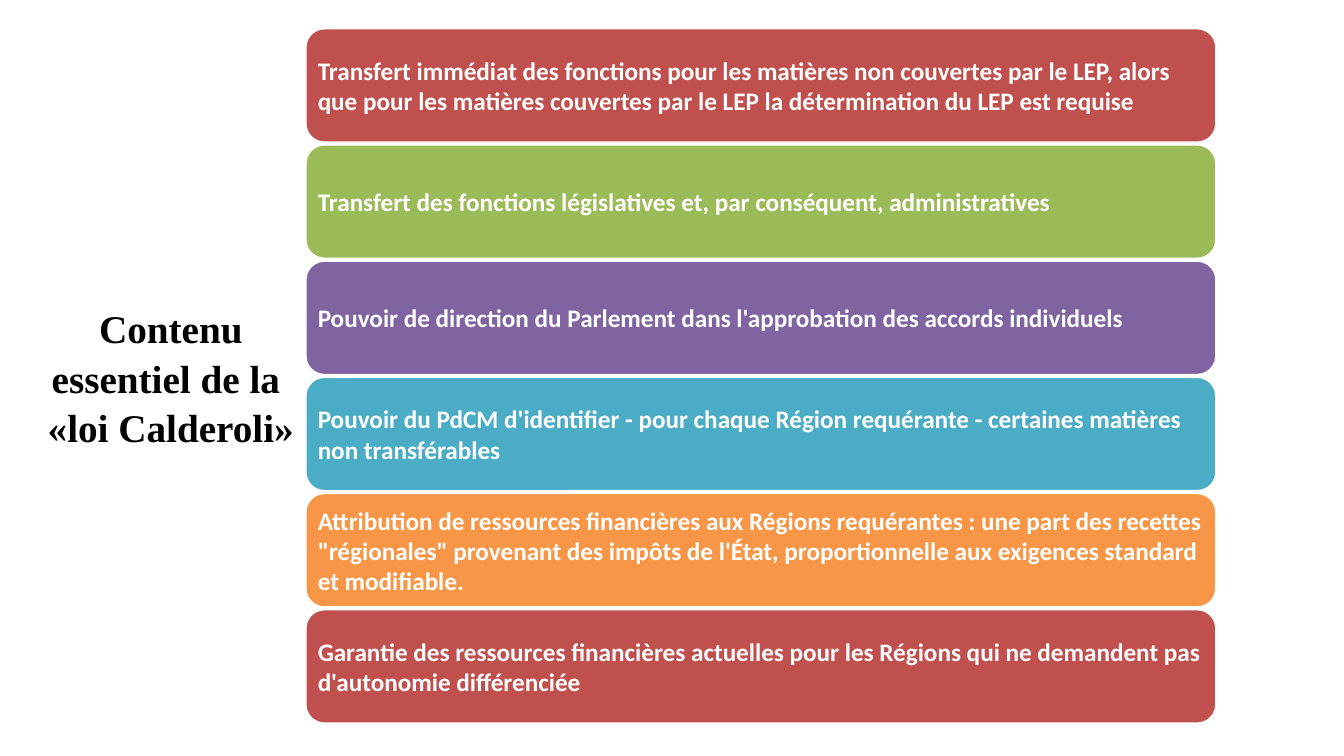
import pptx
import pptx.util
import pptx.dml.color
import pptx.enum.shapes
import pptx.enum.text

EMU_PER_PX = 6350  # 1920 x 1080 px on a 13.33 x 7.5 inch slide

COLORS = {
    "black": "000000",
    "white": "FFFFFF",
    "red": "C0504D",
    "green": "9BBB59",
    "purple": "8064A2",
    "blue": "4BACC6",
    "orange": "F79646",
}

HEADING = "Contenu essentiel de la \v«loi Calderoli»"

PROVISIONS = [
    ("red", "Transfert immédiat des fonctions pour les matières non couvertes par le LEP, "
            "alors que pour les matières couvertes par le LEP la détermination du LEP est requise"),
    ("green", "Transfert des fonctions législatives et, par conséquent, administratives"),
    ("purple", "Pouvoir de direction du Parlement dans l'approbation des accords individuels"),
    ("blue", "Pouvoir du PdCM d'identifier - pour chaque Région requérante - "
             "certaines matières non transférables"),
    ("orange", "Attribution de ressources financières aux Régions requérantes : une part des "
               "recettes \"régionales\" provenant des impôts de l'État, proportionnelle aux "
               "exigences standard et modifiable."),
    ("red", "Garantie des ressources financières actuelles pour les Régions qui ne demandent "
            "pas d'autonomie différenciée"),
]


def px(length):
    return pptx.util.Emu(length * EMU_PER_PX)


def rgb(name):
    return pptx.dml.color.RGBColor.from_string(COLORS[name])


def write_text(frame, text, *, font, size, color, align, inset=None, spacing=1.0):
    frame.word_wrap = True
    frame.auto_size = pptx.enum.text.MSO_AUTO_SIZE.NONE
    frame.vertical_anchor = pptx.enum.text.MSO_ANCHOR.MIDDLE
    if inset is not None:
        frame.margin_left = frame.margin_right = px(inset)
        frame.margin_top = frame.margin_bottom = px(inset)
    frame.text = text
    paragraph = frame.paragraphs[0]
    paragraph.alignment = align
    paragraph.line_spacing = spacing
    for run in paragraph.runs:
        run.font.name = font
        run.font.size = pptx.util.Pt(size)
        run.font.bold = True
        run.font.color.rgb = rgb(color)


class SlideBuilder:
    heading_font = "Times New Roman"
    body_font = "Calibri"

    def __init__(self, slide):
        self.slide = slide

    def heading(self, text, left, top, width, height):
        title = self.slide.shapes.title
        title.left, title.top = px(left), px(top)
        title.width, title.height = px(width), px(height)
        write_text(title.text_frame, text, font=self.heading_font, size=28, color="black",
                   align=pptx.enum.text.PP_ALIGN.CENTER, spacing=1.05)

    def panel(self, text, color, left, top, width, height):
        panel = self.slide.shapes.add_shape(
            pptx.enum.shapes.MSO_SHAPE.ROUNDED_RECTANGLE,
            px(left), px(top), px(width), px(height))
        panel.shadow.inherit = False
        panel.fill.solid()
        panel.fill.fore_color.rgb = rgb(color)
        panel.line.color.rgb = rgb("white")
        panel.line.width = pptx.util.Pt(2)
        write_text(panel.text_frame, text, font=self.body_font, size=18, color="white",
                   align=pptx.enum.text.PP_ALIGN.LEFT, inset=10)


def main():
    deck = pptx.Presentation()
    deck.slide_width, deck.slide_height = px(1920), px(1080)
    title_only = deck.slide_layouts[5]
    builder = SlideBuilder(deck.slides.add_slide(title_only))

    # Heading on the left
    builder.heading(HEADING, 43, 99, 402, 877)

    # Stack of provisions
    height, gap = 164, 2
    for row, (color, provision) in enumerate(PROVISIONS):
        builder.panel(provision, color, 436, 40 + row * (height + gap), 1302, height)

    deck.save("out.pptx")


if __name__ == "__main__":
    main()
